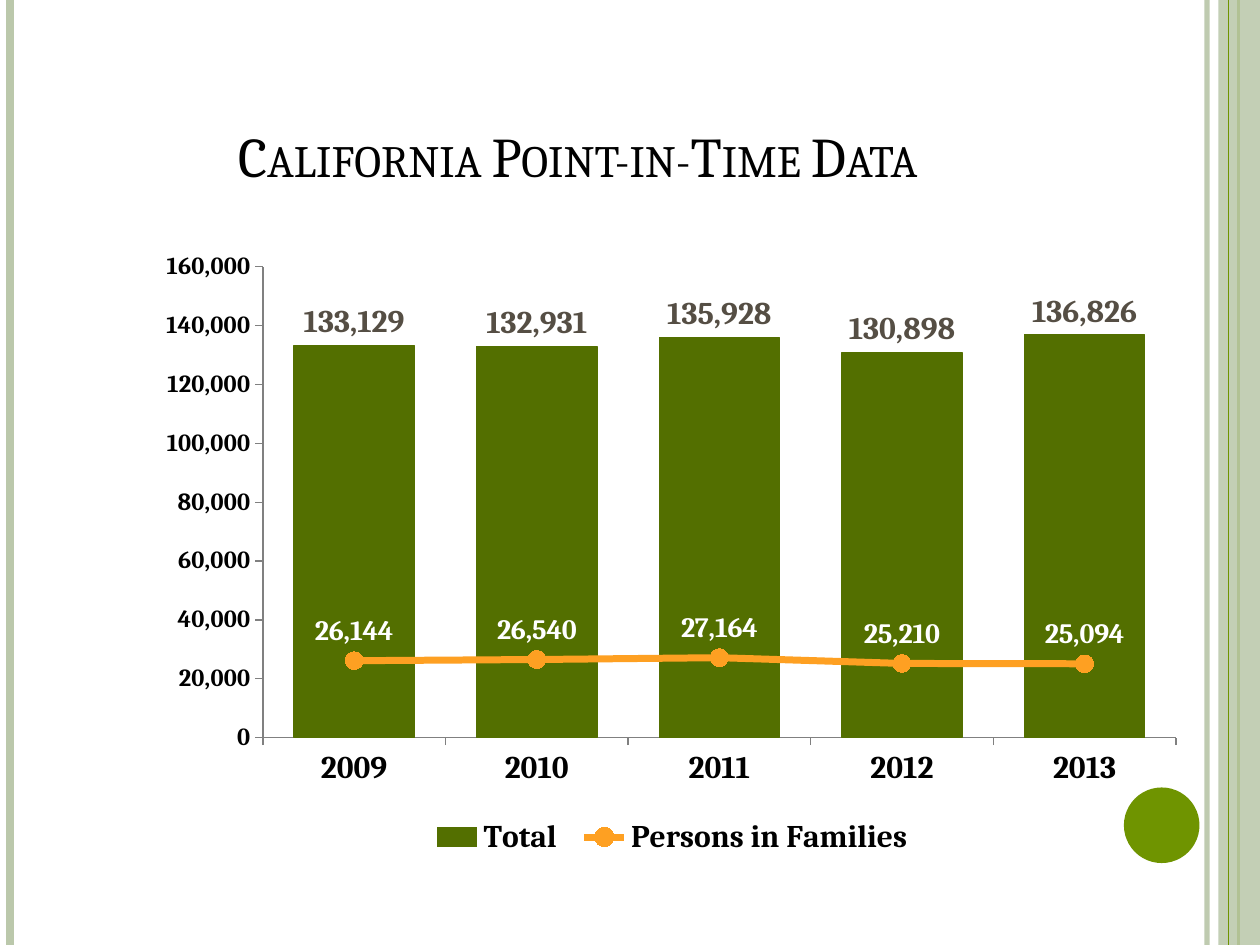
from lxml.etree import SubElement
from pptx import Presentation
from pptx.chart.data import CategoryChartData
from pptx.dml.color import RGBColor
from pptx.enum.chart import (XL_CHART_TYPE, XL_LABEL_POSITION, XL_LEGEND_POSITION,
                             XL_MARKER_STYLE, XL_TICK_MARK)
from pptx.enum.shapes import MSO_CONNECTOR, MSO_SHAPE
from pptx.enum.text import MSO_ANCHOR, PP_ALIGN
from pptx.oxml import parse_xml
from pptx.oxml.ns import nsdecls, qn
from pptx.util import Inches, Pt

SAGE = RGBColor(0xBB, 0xC8, 0xAB)
GREEN = RGBColor(0x6F, 0x94, 0x00)
DARK_GREEN = RGBColor(0x53, 0x6F, 0x00)
ORANGE = RGBColor(0xFE, 0xA0, 0x22)
BROWN = RGBColor(0x55, 0x4E, 0x44)
GRAY = RGBColor(0x80, 0x80, 0x80)
BLACK = RGBColor(0, 0, 0)
WHITE = RGBColor(0xFF, 0xFF, 0xFF)

YEARS = ["2009", "2010", "2011", "2012", "2013"]
TOTAL = [133129, 132931, 135928, 130898, 136826]
FAMILIES = [26144, 26540, 27164, 25210, 25094]


def set_values(target, **values):
    for name, value in values.items():
        setattr(target, name, value)


def set_opacity(fill, color, percent):
    fill.solid()
    fill.fore_color.rgb = color
    if percent < 100:
        color_node = fill._xPr.find(qn("a:solidFill"))[0]
        SubElement(color_node, qn("a:alpha"), val=str(percent * 1000))


def move_to_line_plot(chart, index):
    """Turn one column series into a line on the same axes."""
    bars = chart._chartSpace.find(".//" + qn("c:barChart"))
    series = bars.findall(qn("c:ser"))[index]
    for node in series.findall(qn("c:invertIfNegative")):
        series.remove(node)
    lines = parse_xml(
        f'<c:lineChart {nsdecls("c")}><c:grouping val="standard"/>'
        '<c:varyColors val="0"/><c:marker val="1"/></c:lineChart>')
    lines.insert(2, series)
    for axis in bars.findall(qn("c:axId")):
        SubElement(lines, qn("c:axId"), val=axis.get("val"))
    bars.addnext(lines)


def place_plot(chart, **fractions):
    """Fix the inner plot area as fractions of the chart frame."""
    area = chart._chartSpace.find(".//" + qn("c:plotArea"))
    for node in area.findall(qn("c:layout")):
        area.remove(node)
    sizes = "".join(f'<c:{name} val="{value}"/>' for name, value in fractions.items())
    area.insert(0, parse_xml(
        f'<c:layout {nsdecls("c")}><c:manualLayout><c:layoutTarget val="inner"/>'
        '<c:xMode val="edge"/><c:yMode val="edge"/>'
        f'{sizes}</c:manualLayout></c:layout>'))


class SlideBuilder:
    font_name = "Cambria"

    def __init__(self, page):
        self.page = page

    def title(self, text, left, top, width, height):
        box = self.page.shapes.title
        set_values(box, left=Inches(left), top=Inches(top),
                   width=Inches(width), height=Inches(height))
        set_values(box.text_frame, vertical_anchor=MSO_ANCHOR.BOTTOM, word_wrap=True)
        para = box.text_frame.paragraphs[0]
        para.alignment = PP_ALIGN.CENTER
        span = para.add_run()
        span.text = text
        set_values(span.font, name=self.font_name, size=Pt(32))
        span.font.color.rgb = BLACK
        span.font._element.set("cap", "small")

    def stripe(self, x, color, width, opacity=100):
        line = self.page.shapes.add_connector(
            MSO_CONNECTOR.STRAIGHT, Inches(x), 0, Inches(x), Inches(7.5))
        line.line.width = Pt(width)
        set_opacity(line.line.fill, color, opacity)
        SubElement(line._element.spPr, qn("a:effectLst"))

    def shape(self, kind, left, top, width, height, color, opacity=100):
        shape = self.page.shapes.add_shape(
            kind, Inches(left), Inches(top), Inches(width), Inches(height))
        shape.shadow.inherit = False
        shape.line.fill.background()
        set_opacity(shape.fill, color, opacity)

    def style_font(self, font, size, color=BLACK):
        set_values(font, name=self.font_name, size=Pt(size), bold=True)
        font.color.rgb = color

    def labels(self, series, position, size, color):
        labels = series.data_labels
        set_values(labels, show_value=True, position=position,
                   number_format="#,##0", number_format_is_linked=False)
        self.style_font(labels.font, size, color)

    def axis(self, axis, size):
        set_values(axis, has_major_gridlines=False,
                   major_tick_mark=XL_TICK_MARK.OUTSIDE,
                   minor_tick_mark=XL_TICK_MARK.NONE)
        axis.format.line.color.rgb = GRAY
        axis.format.line.width = Pt(0.75)
        self.style_font(axis.tick_labels.font, size)

    def column_line_chart(self, left, top, width, height):
        data = CategoryChartData(number_format="#,##0")
        data.categories = YEARS
        data.add_series("Total ", TOTAL)
        data.add_series("Persons in Families", FAMILIES)
        chart = self.page.shapes.add_chart(
            XL_CHART_TYPE.COLUMN_CLUSTERED, Inches(left), Inches(top),
            Inches(width), Inches(height), data).chart
        move_to_line_plot(chart, 1)
        place_plot(chart, x=0.11, y=0.04, w=0.87, h=0.76)
        set_values(chart, has_title=False, has_legend=True)
        self.style_font(chart.font, 10)
        set_values(chart.legend, position=XL_LEGEND_POSITION.BOTTOM,
                   include_in_layout=False)
        self.style_font(chart.legend.font, 18)

        self.axis(chart.category_axis, 18)
        self.axis(chart.value_axis, 14)
        set_values(chart.value_axis, minimum_scale=0, maximum_scale=160000,
                   major_unit=20000)
        set_values(chart.value_axis.tick_labels, number_format="#,##0",
                   number_format_is_linked=False)

        columns, lines = chart.plots
        set_values(columns, gap_width=52, vary_by_categories=False)
        total, families = columns.series[0], lines.series[0]
        families.smooth = False
        set_values(families.marker, style=XL_MARKER_STYLE.CIRCLE, size=10)
        for part, color, line_width in ((total, DARK_GREEN, 0.75),
                                        (families.marker, ORANGE, 0.75)):
            part.format.fill.solid()
            part.format.fill.fore_color.rgb = color
            part.format.line.color.rgb = color
            part.format.line.width = Pt(line_width)
        families.format.line.color.rgb = ORANGE
        families.format.line.width = Pt(4)
        self.labels(total, XL_LABEL_POSITION.OUTSIDE_END, 18, BROWN)
        self.labels(families, XL_LABEL_POSITION.ABOVE, 16, WHITE)


def main():
    deck = Presentation()
    set_values(deck, slide_width=Inches(10), slide_height=Inches(7.5))
    builder = SlideBuilder(deck.slides.add_slide(deck.slide_layouts[5]))
    builder.stripe(9.58, SAGE, 3, opacity=93)
    builder.stripe(0.08, SAGE, 4.5)
    builder.stripe(9.83, GREEN, 1.5)
    builder.shape(MSO_SHAPE.RECTANGLE, 9.67, 0, 0.33, 7.5, SAGE, opacity=87)
    builder.stripe(9.75, GREEN, 0.75)
    builder.shape(MSO_SHAPE.OVAL, 8.92, 6.25, 0.6, 0.6, GREEN)
    builder.title("California Point-in-Time Data", 0.5, 0.3, 8.17, 1.25)
    builder.column_line_chart(1.17, 1.92, 8.33, 4.92)
    deck.save("out.pptx")


if __name__ == "__main__":
    main()
